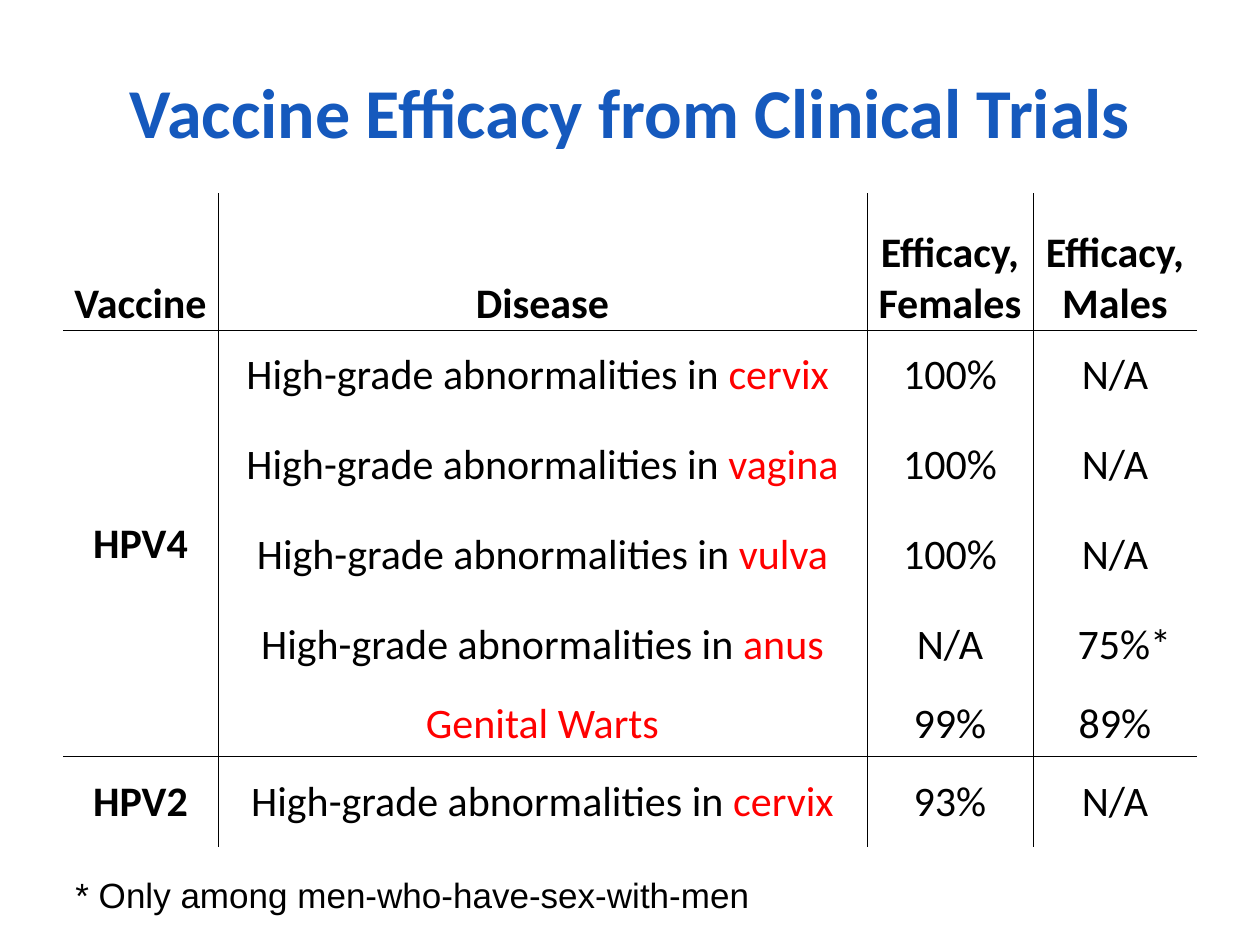
from lxml import etree
from pptx import Presentation
from pptx import util as u
from pptx.dml.color import RGBColor
from pptx.enum import text
from pptx.oxml.ns import qn

BLUE = RGBColor(0x15, 0x59, 0xBD)
RED = RGBColor(0xFF, 0, 0)
BLACK = RGBColor(0, 0, 0)
WHITE = RGBColor(0xFF, 0xFF, 0xFF)

TITLE = "Vaccine Efficacy from Clinical Trials"
FOOTNOTE = "* Only among men-who-have-sex-with-men"
FINDING = "High-grade abnormalities in "
ROWS = [
    ("Vaccine", ("Disease", ""), "Efficacy,\vFemales", "Efficacy,\vMales"),
    ("HPV4", (FINDING, "cervix "), "100%", "N/A"),
    ("", (FINDING, "vagina"), "100%", "N/A"),
    ("", (FINDING, "vulva"), "100%", "N/A"),
    ("", (FINDING, "anus"), "N/A", "75%*"),
    ("", ("", "Genital Warts"), "99%", "89%"),
    ("HPV2", (FINDING, "cervix"), "93%", "N/A"),
]
WIDTHS = [155, 649, 166, 164]
HEIGHTS = [137, 90, 90, 90, 90, 67, 90]
GROUP_FIRST, GROUP_LAST = 1, 5
RULED_ROWS = {0, 5}
STARRED = "75%*"


def px(count):
    return u.Emu(round(count * 914400 / 126))


def style(span, font, size, color, bold=False):
    span.font.name = font
    span.font.size = u.Pt(size)
    span.font.color.rgb = color
    span.font.bold = bold


def draw_borders(cell, sides):
    properties = cell._tc.get_or_add_tcPr()
    for side in "LRTB":
        line = etree.SubElement(properties, qn(f"a:ln{side}"), w=str(u.Pt(0.5)))
        if sides[side]:
            fill = etree.SubElement(line, qn("a:solidFill"))
            etree.SubElement(fill, qn("a:srgbClr"), val=str(BLACK))
        else:
            etree.SubElement(line, qn("a:noFill"))


def fill_cell(cell, content, row, column):
    last_row = GROUP_LAST if cell.is_merge_origin else row
    draw_borders(cell, {
        "L": column > 0,
        "R": column < len(WIDTHS) - 1,
        "T": row - 1 in RULED_ROWS,
        "B": last_row in RULED_ROWS,
    })
    cell.fill.solid()
    cell.fill.fore_color.rgb = WHITE
    cell.margin_left = px(20 if content == STARRED else 1)
    cell.margin_right = cell.margin_top = px(1)
    cell.margin_bottom = 0
    cell.vertical_anchor = text.MSO_ANCHOR.BOTTOM if row == 0 else text.MSO_ANCHOR.MIDDLE
    if cell.is_spanned:
        return
    para = cell.text_frame.paragraphs[0]
    plain, marked = content if isinstance(content, tuple) else (content, "")
    para.text = plain
    para.alignment = text.PP_ALIGN.CENTER
    for span in para.runs:
        style(span, "Calibri", 24, BLACK, row == 0 or column == 0)
    if marked:
        span = para.add_run()
        span.text = marked
        style(span, "Calibri", 24, RED)


def add_title(page):
    title = page.shapes.title
    title.left, title.top, title.width, title.height = px(0), px(42), px(1260), px(136)
    title.text_frame.text = TITLE
    title.text_frame.vertical_anchor = text.MSO_ANCHOR.MIDDLE
    para = title.text_frame.paragraphs[0]
    para.alignment = text.PP_ALIGN.CENTER
    style(para.runs[0], "Calibri", 40, BLUE, True)


def add_efficacy_table(page):
    table = page.shapes.add_table(
        len(ROWS), len(WIDTHS), px(63), px(193), px(sum(WIDTHS)), px(sum(HEIGHTS))
    ).table
    table.first_row = table.horz_banding = False
    for column, width in zip(table.columns, WIDTHS):
        column.width = px(width)
    for row, height in zip(table.rows, HEIGHTS):
        row.height = px(height)
    table.cell(GROUP_FIRST, 0).merge(table.cell(GROUP_LAST, 0))
    for row, contents in enumerate(ROWS):
        for column, content in enumerate(contents):
            fill_cell(table.cell(row, column), content, row, column)


def add_footnote(page):
    box = page.shapes.add_textbox(px(63), px(872), px(1040), px(50))
    box.text_frame.word_wrap = True
    box.text_frame.text = FOOTNOTE
    para = box.text_frame.paragraphs[0]
    para.line_spacing = 0.9
    style(para.runs[0], "Arial", 20, BLACK)


def main():
    deck = Presentation()
    deck.slide_width, deck.slide_height = px(1260), px(945)
    page = deck.slides.add_slide(deck.slide_layouts[5])
    add_title(page)
    add_efficacy_table(page)
    add_footnote(page)
    deck.save("out.pptx")


if __name__ == "__main__":
    main()
